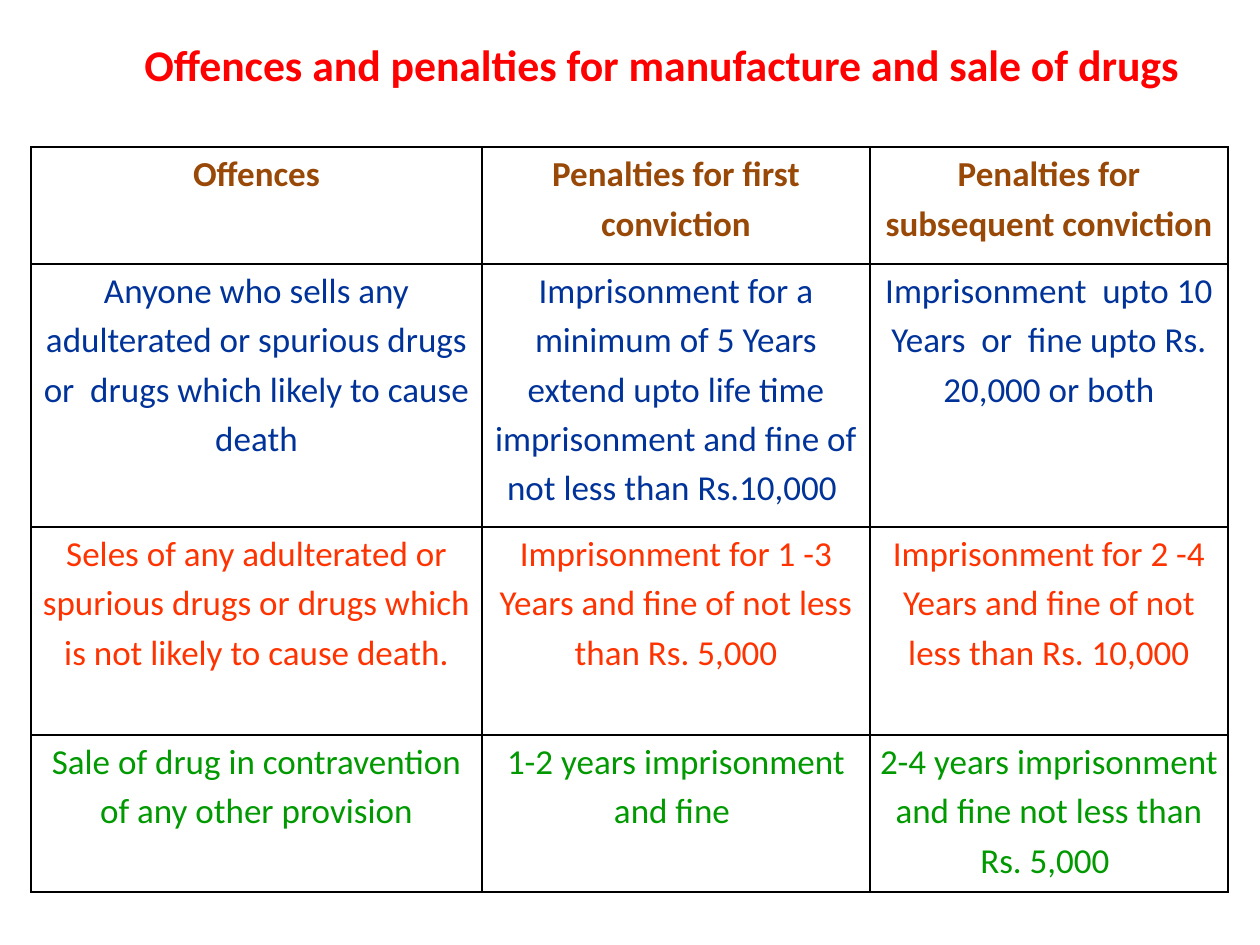
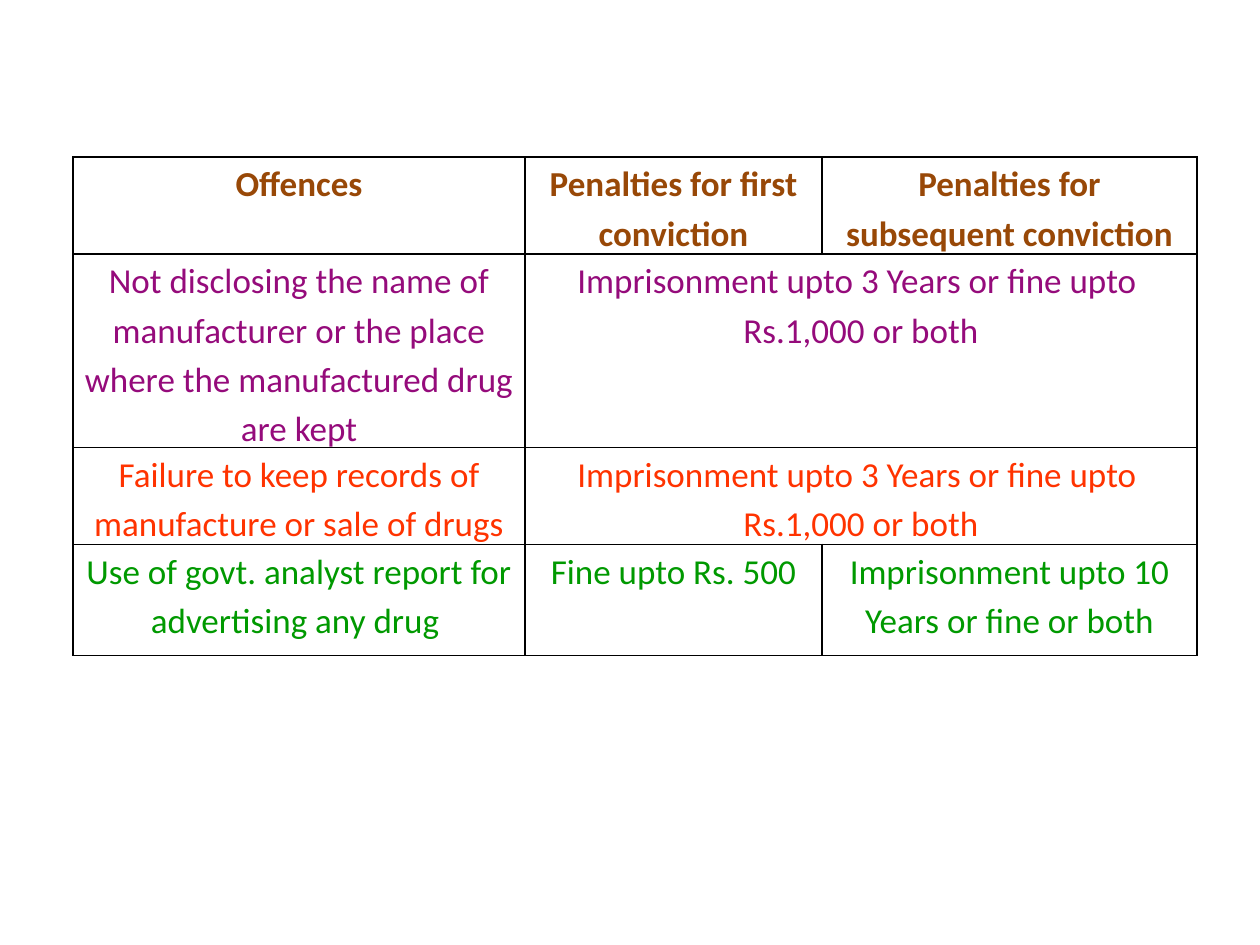
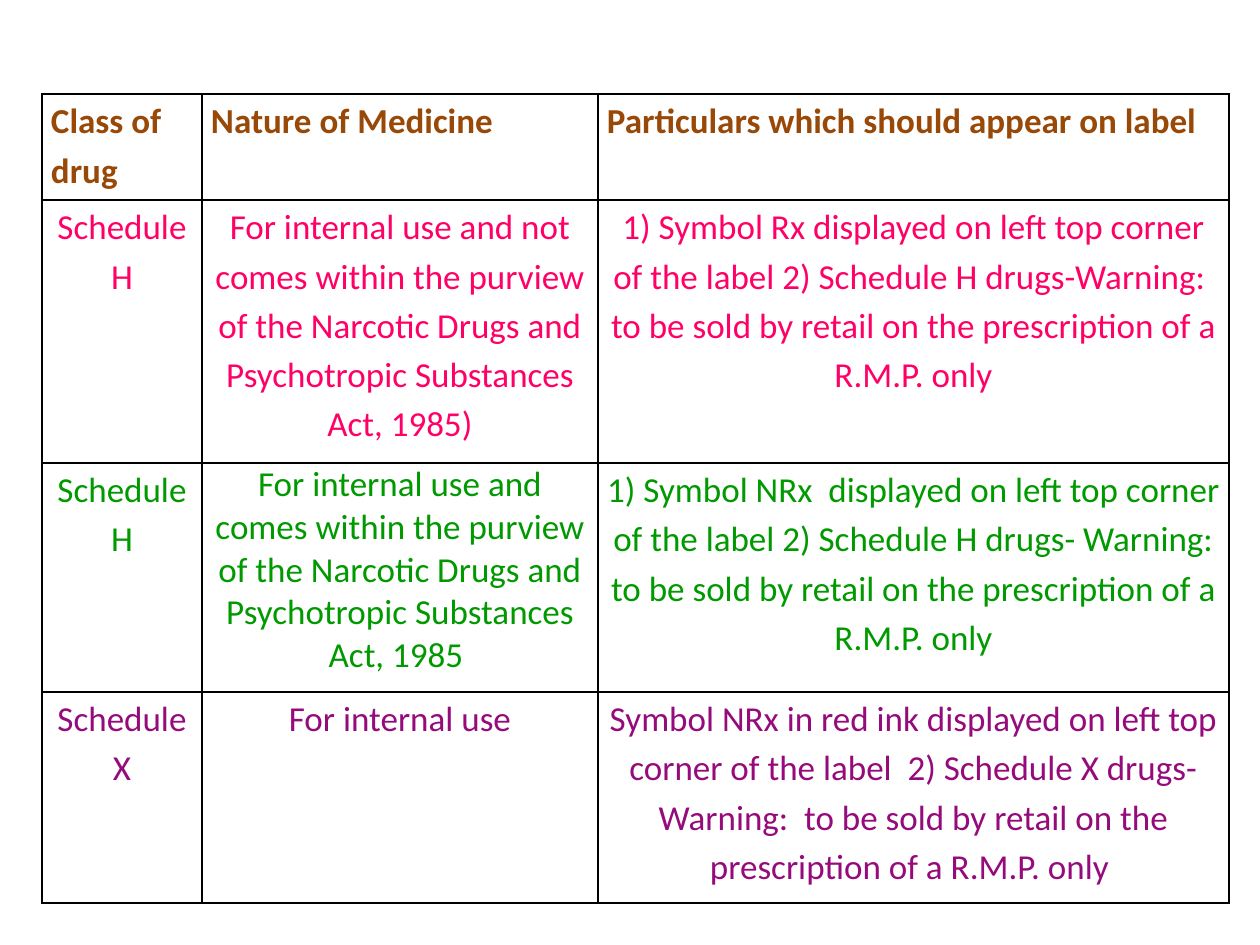
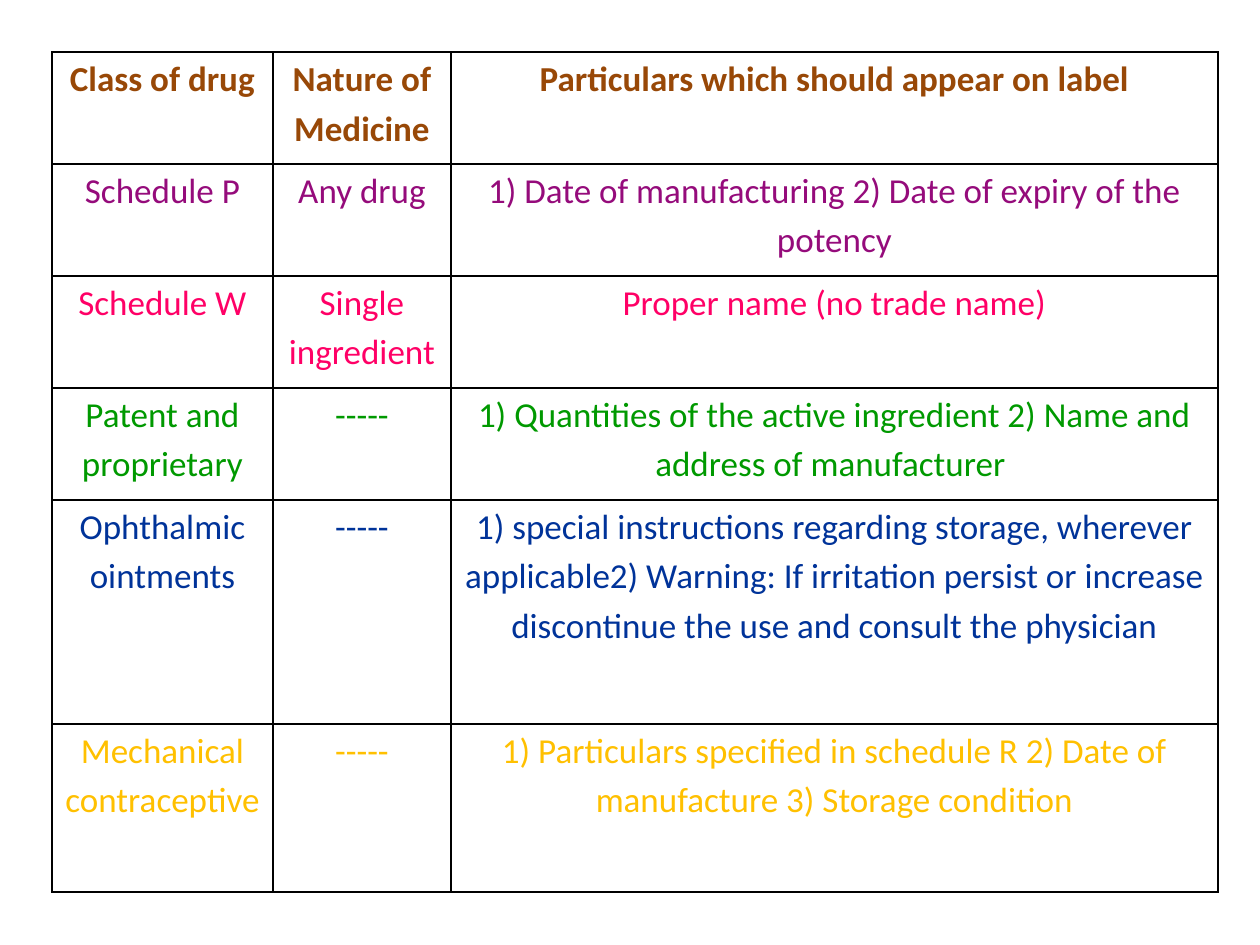
import dataclasses

import pptx
import pptx.dml.color
import pptx.enum.text
import pptx.oxml
import pptx.oxml.ns
import pptx.util

ALIGN = pptx.enum.text.PP_ALIGN


@dataclasses.dataclass(frozen=True)
class Theme:
    font: str = "Calibri"
    title_size: int = 25
    cell_size: int = 20
    line_spacing: float = 1.15
    border_width: int = 1
    cell_inset: int = 9
    border: str = "000000"
    title: str = "FF0000"
    heading: str = "984807"
    blue: str = "003399"
    orange: str = "FF3300"
    green: str = "009900"
    purple: str = "950B7B"
    pink: str = "FF0066"
    gold: str = "FFC000"


class Deck:
    SCALE = 914400 // 126

    def __init__(self, theme):
        self.theme = theme
        self.presentation = pptx.Presentation()
        self.presentation.slide_width = self.px(1260)
        self.presentation.slide_height = self.px(945)
        self.slide = None

    def px(self, length):
        return pptx.util.Emu(length * self.SCALE)

    def add_slide(self):
        self.slide = self.presentation.slides.add_slide(self.presentation.slide_layouts[6])

    def set_text(self, frame, text, size, color, bold, align=ALIGN.CENTER):
        frame.text = text
        paragraph = frame.paragraphs[0]
        paragraph.alignment = align
        font = paragraph.runs[0].font
        font.name = self.theme.font
        font.size = pptx.util.Pt(size)
        font.bold = bold
        font.color.rgb = pptx.dml.color.RGBColor.from_string(color)
        return paragraph

    def title(self, text, left, top, width, height):
        box = self.slide.shapes.add_textbox(*map(self.px, (left, top, width, height)))
        frame = box.text_frame
        frame.word_wrap = True
        frame.auto_size = pptx.enum.text.MSO_AUTO_SIZE.SHAPE_TO_FIT_TEXT
        self.set_text(frame, text, self.theme.title_size, self.theme.title, True)

    def cell_style(self, cell):
        cell.margin_left = cell.margin_right = self.px(self.theme.cell_inset)
        cell.margin_top = cell.margin_bottom = 0
        properties = cell._tc.get_or_add_tcPr()
        width = pptx.util.Pt(self.theme.border_width)
        for side in "LRTB":
            properties.append(pptx.oxml.parse_xml(
                f'<a:ln{side} {pptx.oxml.ns.nsdecls("a")} w="{width}"><a:solidFill>'
                f'<a:srgbClr val="{self.theme.border}"/></a:solidFill></a:ln{side}>'))
        cell.fill.background()

    def table(self, left, top, widths, heights, headings, entries,
              space_after=0, heading_align=ALIGN.CENTER, single_spaced=()):
        frame = self.slide.shapes.add_table(
            len(heights), len(widths),
            *map(self.px, (left, top, sum(widths), sum(heights))))
        table = frame.table
        table.first_row = table.horz_banding = False
        for column, width in zip(table.columns, widths):
            column.width = self.px(width)
        for row, height in zip(table.rows, heights):
            row.height = self.px(height)
        for r, (color, *texts) in enumerate([(self.theme.heading, *headings), *entries]):
            for c, text in enumerate(texts):
                cell = table.cell(r, c)
                self.cell_style(cell)
                if text is None:
                    table.cell(r, c - 1).merge(cell)
                    continue
                paragraph = self.set_text(cell.text_frame, text, self.theme.cell_size, color,
                                          r == 0, heading_align if r == 0 else ALIGN.CENTER)
                if (r, c) not in single_spaced:
                    paragraph.line_spacing = self.theme.line_spacing
                    paragraph.space_after = pptx.util.Pt(space_after)


PENALTY_HEADINGS = ("Offences", "Penalties for first conviction",
                    "Penalties for subsequent conviction")
LABEL_HEADINGS = ("Class of drug", "Nature of Medicine",
                  "Particulars which should appear on label")


def sale_penalties(deck):
    theme = deck.theme
    deck.add_slide()
    deck.table(31, 147, (451, 388, 358), (117, 263, 208, 157), PENALTY_HEADINGS, [
        (theme.blue,
         "Anyone who sells any adulterated or spurious drugs or  drugs which likely to cause death",
         "Imprisonment for a minimum of 5 Years extend upto life time imprisonment "
         "and fine of not less than Rs.10,000 ",
         "Imprisonment  upto 10 Years  or  fine upto Rs. 20,000 or both"),
        (theme.orange,
         "Seles of any adulterated or spurious drugs or drugs which is not likely to cause death.",
         "Imprisonment for 1 -3 Years and fine of not less than Rs. 5,000",
         "Imprisonment for 2 -4 Years and fine of not less than Rs. 10,000"),
        (theme.green,
         "Sale of drug in contravention of any other provision",
         "1-2 years imprisonment and fine ",
         "2-4 years imprisonment and fine not less than Rs. 5,000 "),
    ])
    deck.title("Offences and penalties for manufacture and sale of drugs", 116, 32, 1091, 118)


def record_penalties(deck):
    theme = deck.theme
    three_years = "Imprisonment upto 3 Years or fine upto  Rs.1,000 or both"
    deck.add_slide()
    deck.table(73, 157, (452, 297, 375), (97, 193, 97, 111), PENALTY_HEADINGS, [
        (theme.purple,
         "Not disclosing the name of manufacturer or the place where the manufactured drug are kept",
         three_years, None),
        (theme.orange, "Failure to keep records of manufacture or sale of drugs",
         three_years, None),
        (theme.green, "Use of govt. analyst report for advertising any drug ",
         "Fine upto Rs. 500", "Imprisonment upto 10 Years or fine or both"),
    ])


def prescription_labels(deck):
    theme = deck.theme
    deck.add_slide()
    deck.table(42, 94, (160, 396, 631), (106, 263, 229, 211), LABEL_HEADINGS, [
        (theme.pink, "Schedule H",
         "For internal use and not comes within the purview of the Narcotic Drugs "
         "and Psychotropic Substances Act, 1985)",
         "1) Symbol Rx displayed on left top corner of the label 2) Schedule H drugs-Warning:  "
         "to be sold by retail on the prescription of a R.M.P. only"),
        (theme.green, "Schedule H",
         "For internal use and comes within the purview of the Narcotic Drugs "
         "and Psychotropic Substances Act, 1985 ",
         "1) Symbol NRx  displayed on left top corner of the label 2) Schedule H drugs- Warning: "
         "to be sold by retail on the prescription of a R.M.P. only"),
        (theme.purple, "Schedule X", "For internal use",
         "Symbol NRx in red ink displayed on left top corner of the label  2) Schedule X drugs- "
         "Warning:  to be sold by retail on the prescription of a R.M.P. only "),
    ], space_after=10, heading_align=ALIGN.LEFT, single_spaced={(2, 1)})


def other_labels(deck):
    theme = deck.theme
    unspecified = "-----"
    deck.add_slide()
    deck.table(52, 52, (221, 178, 767), (112, 112, 112, 112, 224, 168), LABEL_HEADINGS, [
        (theme.purple, "Schedule P", "Any drug",
         "1) Date of manufacturing 2) Date of expiry of the potency"),
        (theme.pink, "Schedule W", "Single ingredient", "Proper name (no trade name)"),
        (theme.green, "Patent and proprietary", unspecified,
         "1) Quantities of the active ingredient 2) Name and address of manufacturer "),
        (theme.blue, "Ophthalmic ointments", unspecified,
         "1) special instructions regarding storage, wherever applicable2) Warning: If irritation "
         "persist or increase discontinue the use and consult the physician"),
        (theme.gold, "Mechanical contraceptive", unspecified,
         "1) Particulars specified in schedule R 2) Date of manufacture 3) Storage condition"),
    ], space_after=10)


def main():
    deck = Deck(Theme())
    for build in (sale_penalties, record_penalties, prescription_labels, other_labels):
        build(deck)
    deck.presentation.save("out.pptx")


if __name__ == "__main__":
    main()
